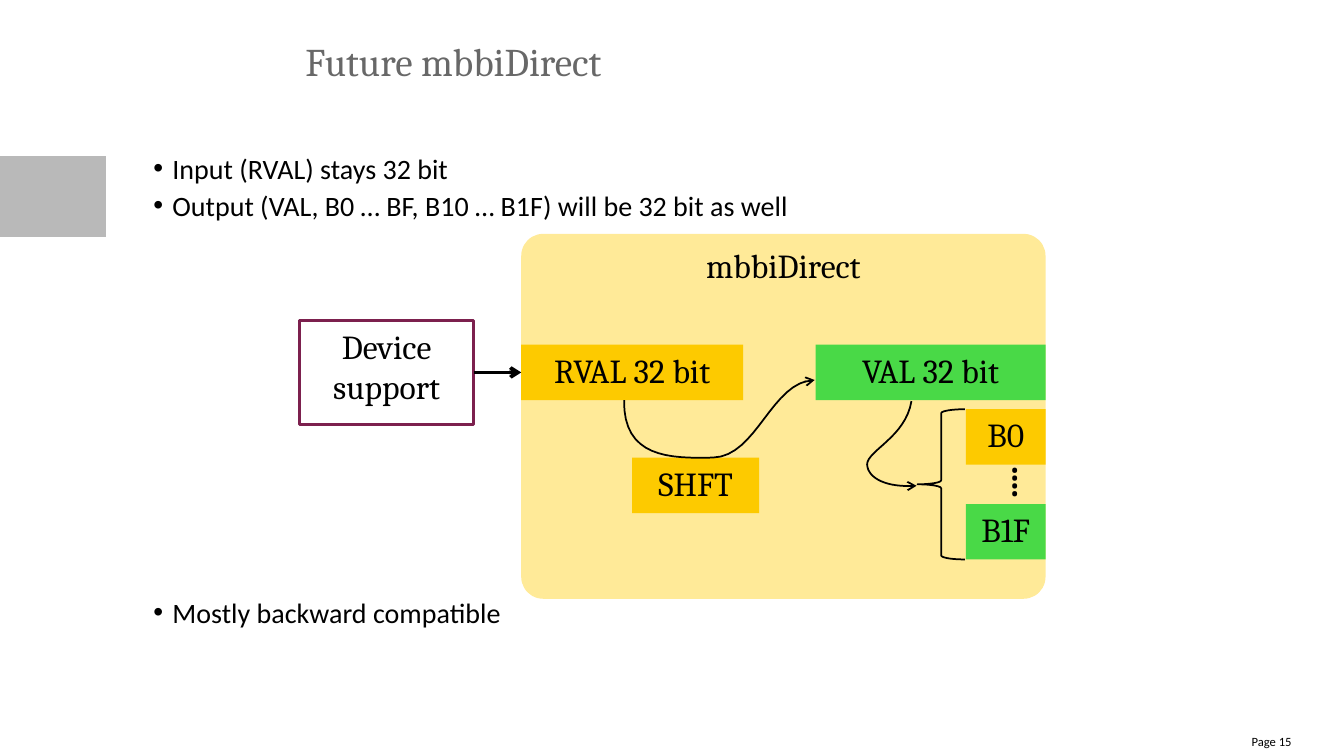
from lxml.etree import SubElement as Sub
from pptx import Presentation
from pptx.dml.color import RGBColor
from pptx.enum.shapes import MSO_CONNECTOR as Conn, MSO_SHAPE as Shape
from pptx.enum.text import MSO_ANCHOR as Anchor, MSO_AUTO_SIZE as Fit, PP_ALIGN as Align
from pptx.oxml.ns import qn
from pptx.util import Pt

INK, GOLD, GREEN, CREAM = "000000", "FDCA00", "49D947", "FFEA98"
STEPS = 16


def px(n):
    """Turn px, 100 to the inch, into EMU."""
    return round(n * 9144)


def tint(fmt, code):
    """Set a solid colour from a hex string."""
    if hasattr(fmt, "solid"):
        fmt.solid()
        fmt = fmt.fore_color
    else:
        fmt = fmt.color
    fmt.rgb = RGBColor.from_string(code)


def place(item, box):
    """Move an item to a px box."""
    item.left, item.top, item.width, item.height = map(px, box)


def write(para, text, size, face, code=INK):
    """Add text to a paragraph, one run per line."""
    for i, line in enumerate(text.split("\n")):
        if i:
            para.add_line_break()
        run = para.add_run()
        run.text = line
        run.font.size, run.font.name = Pt(size), face
        tint(run.font, code)


def strip(frame, wrap=True):
    """Clear the margins of a text frame and anchor it at the top."""
    frame.margin_left = frame.margin_right = frame.margin_top = frame.margin_bottom = 0
    frame.auto_size = Fit.NONE
    frame.word_wrap = wrap
    frame.vertical_anchor = Anchor.TOP


def block(slide, box, fill, text="", kind=Shape.RECTANGLE, edge=None):
    """Draw a filled shape with a centred label at its top."""
    item = slide.shapes.add_shape(kind, *map(px, box))
    item.shadow.inherit = False
    tint(item.fill, fill)
    if edge:
        tint(item.line, edge)
        item.line.width = Pt(2)
    else:
        item.line.fill.background()
    if text:
        frame = item.text_frame
        frame.word_wrap = True
        frame.vertical_anchor = Anchor.TOP
        para = frame.paragraphs[0]
        para.alignment = Align.CENTER
        write(para, text, 24, "Cambria")
    return item


def note(slide, box, text, size, face, align, wrap=True):
    """Add a text box without margins."""
    frame = slide.shapes.add_textbox(*map(px, box)).text_frame
    strip(frame, wrap)
    para = frame.paragraphs[0]
    para.alignment = align
    write(para, text, size, face)


def stroke(item, width, head=True):
    """Style a black line, with an arrowhead at its end if wanted."""
    tint(item.line, INK)
    item.line.width = Pt(width)
    if head:
        Sub(item.line._get_or_add_ln(), qn("a:tailEnd"), type="arrow")


def curve(slide, x, y, points):
    """Draw an arrow along joined cubic curves, relative to x, y."""
    trail = []
    for k in range(0, len(points) - 1, 3):
        for i in range(1, STEPS + 1):
            t = i / STEPS
            parts = ((1 - t) ** 3, 3 * t * (1 - t) ** 2, 3 * t * t * (1 - t), t ** 3)
            bend = points[k:k + 4]
            trail.append((px(x + sum(w * p[0] for w, p in zip(parts, bend))),
                          px(y + sum(w * p[1] for w, p in zip(parts, bend)))))
    first = points[0]
    pen = slide.shapes.build_freeform(px(x + first[0]), px(y + first[1]))
    pen.add_line_segments(trail, close=False)
    item = pen.convert_to_shape()
    item.shadow.inherit = False
    item.fill.background()
    stroke(item, 1.25)


def heading(slide, box):
    """Fill the title."""
    title = slide.shapes.title
    place(title, box)
    strip(title.text_frame)
    title.text_frame.vertical_anchor = Anchor.MIDDLE
    para = title.text_frame.paragraphs[0]
    para.alignment = Align.LEFT
    write(para, "Future mbbiDirect", 28, "Cambria", "686868")


def points(slide, box):
    """Fill the bullet list, leaving room for the diagram."""
    body = slide.placeholders[1]
    place(body, box)
    frame = body.text_frame
    strip(frame)
    rows = (("Input (RVAL) stays 32 bit", 0),
            ("Output (VAL, B0 … BF, B10 … B1F) will be 32 bit as well", 0),
            ("Mostly backward compatible", 264))
    for i, (text, gap) in enumerate(rows):
        para = frame.add_paragraph() if i else frame.paragraphs[0]
        props = para._p.get_or_add_pPr()
        props.set("marL", str(px(19)))
        props.set("indent", str(px(-19)))
        Sub(props, qn("a:buChar"), char="•")
        para.line_spacing = 1.1
        para.space_before, para.space_after = Pt(gap), Pt(0)
        write(para, text, 20, "Calibri")


def record(slide, box):
    """Draw the record panel and return its input block."""
    x, y, w, h = box
    panel = block(slide, box, CREAM, "mbbiDirect", Shape.ROUNDED_RECTANGLE)
    panel.adjustments[0] = 0.06
    tall = 55
    rval = block(slide, (x, y + 110, 220, tall), GOLD, "RVAL 32 bit")
    block(slide, (x + w - 228, y + 110, 228, tall), GREEN, "VAL 32 bit")
    for text, drop, fill in (("B0", 174, GOLD), ("B1F", 268, GREEN)):
        block(slide, (x + w - 79, y + drop, 79, tall), fill, text)
    note(slide, (x + 480, y + 222, 19, tall), "⁞", 28, "Cambria", Align.CENTER, False)
    block(slide, (x + 110, y + 222, 126, tall), GOLD, "SHFT")
    brace = slide.shapes.add_shape(Shape.LEFT_BRACE, *map(px, (x + 393, y + 174, 47, 149)))
    brace.shadow.inherit = False
    brace.fill.background()
    stroke(brace, 1.25, False)
    curve(slide, x, y, [(387, 166), (381, 202), (343, 215), (343, 229),
                        (344, 243), (363, 252), (392, 250)])
    curve(slide, x, y, [(102, 165), (101, 222), (147, 223), (190, 222),
                        (234, 221), (248, 146), (291, 145)])
    return rval


def source(slide, box, goal):
    """Draw the device block and its arrow to the goal."""
    device = block(slide, box, "FFFFFF", "Device\nsupport", edge="7C204E")
    link = slide.shapes.add_connector(Conn.STRAIGHT, 0, 0, 0, 0)
    link.begin_connect(device, 3)
    link.end_connect(goal, 1)
    stroke(link, 2.5)
    Sub(link._element.spPr, qn("a:effectLst"))


def main():
    """Build and save the slide."""
    deck = Presentation()
    deck.slide_width, deck.slide_height = px(1333), px(750)
    slide = deck.slides.add_slide(deck.slide_layouts[1])
    block(slide, (0, 155, 105, 80), "B9B9B9")
    heading(slide, (303, 32, 978, 56))
    points(slide, (152, 147, 1129, 512))
    note(slide, (1197, 728, 84, 22), "Page 15", 9, "Calibri", Align.RIGHT)
    rval = record(slide, (517, 232, 520, 362))
    source(slide, (297, 318, 173, 103), rval)
    deck.save("out.pptx")


if __name__ == "__main__":
    main()
